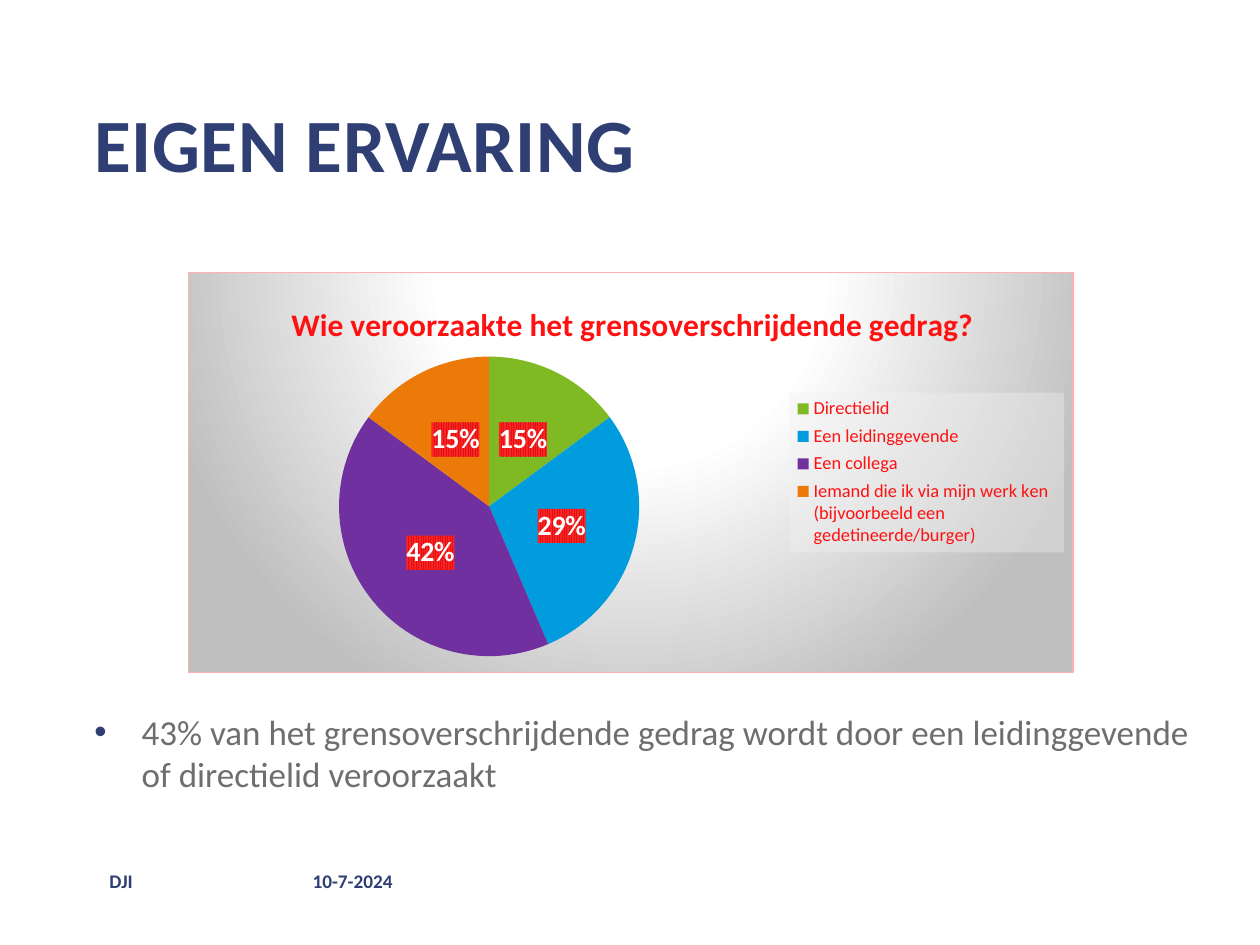
from pptx import Presentation
from pptx.chart.data import CategoryChartData
from pptx.dml.color import RGBColor
from pptx.enum.chart import XL_CHART_TYPE as ChartType
from pptx.enum.chart import XL_LABEL_POSITION as LabelPosition
from pptx.enum.chart import XL_LEGEND_POSITION as LegendPosition
from pptx.enum.text import MSO_ANCHOR as Anchor
from pptx.enum.text import MSO_AUTO_SIZE as AutoSize
from pptx.enum.text import PP_ALIGN as Align
from pptx.oxml import parse_xml
from pptx.oxml.ns import nsdecls
from pptx.util import Pt

NAVY = RGBColor(0x2F, 0x3F, 0x73)
GREY = RGBColor(0x6E, 0x6E, 0x6E)
RED = RGBColor(0xFF, 0x11, 0x11)
DARK_RED = RGBColor(0xC0, 0x00, 0x00)
WHITE = RGBColor(0xFF, 0xFF, 0xFF)
GREEN = RGBColor(0x7F, 0xBA, 0x25)
BLUE = RGBColor(0x00, 0x9C, 0xDE)
PURPLE = RGBColor(0x70, 0x30, 0xA0)
ORANGE = RGBColor(0xEC, 0x7A, 0x08)

CHART_BACKGROUND = """<a:gradFill><a:gsLst>
<a:gs pos="0"><a:srgbClr val="FFFFFF"/></a:gs>
<a:gs pos="39000"><a:srgbClr val="FFFFFF"/></a:gs>
<a:gs pos="100000"><a:srgbClr val="BFBFBF"/></a:gs></a:gsLst>
<a:path path="circle"><a:fillToRect l="50000" t="-80000" r="50000" b="180000"/></a:path>
</a:gradFill>
<a:ln w="9525"><a:solidFill><a:srgbClr val="FFB0B0"/></a:solidFill></a:ln>"""
LEGEND_BACKGROUND = """<a:solidFill><a:srgbClr val="F2F2F2">
<a:alpha val="39000"/></a:srgbClr></a:solidFill>"""
LABEL_BACKGROUND = """<a:pattFill prst="narVert"><a:fgClr><a:srgbClr val="D81414"/></a:fgClr>
<a:bgClr><a:srgbClr val="FF2222"/></a:bgClr></a:pattFill>"""

SLICES = [
    ("Directielid", 15, GREEN),
    ("Een leidinggevende", 29, BLUE),
    ("Een collega", 42, PURPLE),
    ("Iemand die ik via mijn werk ken (bijvoorbeeld een gedetineerde/burger)", 15, ORANGE),
]


def add_background(element, fill):
    """Put shape properties right before the text properties of a chart element."""
    text_properties = element.xpath("./c:txPr")[0]
    text_properties.addprevious(parse_xml(f"<c:spPr {nsdecls('c', 'a')}>{fill}</c:spPr>"))


def set_layout(element, index, target="", **fractions):
    """Place a chart element by fractions of the chart area."""
    for layout in element.xpath("./c:layout"):
        element.remove(layout)
    modes = '<c:xMode val="edge"/><c:yMode val="edge"/>'
    values = "".join(f'<c:{key} val="{value}"/>' for key, value in fractions.items())
    element.insert(index, parse_xml(
        f"<c:layout {nsdecls('c')}><c:manualLayout>{target}{modes}{values}"
        "</c:manualLayout></c:layout>"))


class SlideBuilder:
    font_name = "Calibri"

    def __init__(self, slide):
        self.slide = slide

    def style(self, font, size, color, bold=False):
        values = {"name": self.font_name, "size": Pt(size), "bold": bold}
        for name, value in values.items():
            setattr(font, name, value)
        font.color.rgb = color

    def fill_text(self, shape, text, size, color, bold, anchor, wrap):
        frame = shape.text_frame
        values = {"margin_left": 0, "margin_top": 0, "margin_right": 0, "margin_bottom": 0,
                  "auto_size": AutoSize.NONE, "word_wrap": wrap, "vertical_anchor": anchor}
        for name, value in values.items():
            setattr(frame, name, value)
        paragraph = frame.paragraphs[0]
        paragraph.alignment = Align.LEFT
        run = paragraph.add_run()
        run.text = text
        self.style(run.font, size, color, bold)
        return paragraph

    def title(self, text, left, top, width, height):
        shape = self.slide.shapes.title
        box = {"left": left, "top": top, "width": width, "height": height}
        for name, value in box.items():
            setattr(shape, name, Pt(value))
        paragraph = self.fill_text(shape, text, 43, NAVY, True, Anchor.TOP, False)
        paragraph.runs[0].font._element.set("spc", "40")

    def text(self, text, box, size, color, bold=False, anchor=Anchor.TOP, wrap=True):
        shape = self.slide.shapes.add_textbox(*map(Pt, box))
        return self.fill_text(shape, text, size, color, bold, anchor, wrap)

    def bullet(self, text, box):
        paragraph = self.text(text, box, 20, GREY)
        properties = paragraph._p.get_or_add_pPr()
        properties.set("marL", str(Pt(27)))
        properties.set("indent", str(-Pt(27)))
        for child in (f'<a:buClr {nsdecls("a")}><a:srgbClr val="{NAVY}"/></a:buClr>',
                      f'<a:buFont {nsdecls("a")} typeface="Arial"/>',
                      f'<a:buChar {nsdecls("a")} char="•"/>'):
            properties.append(parse_xml(child))

    def pie(self, title, slices, box):
        data = CategoryChartData()
        data.categories = [name for name, _, _ in slices]
        data.add_series("Series 1", [value for _, value, _ in slices])
        chart = self.slide.shapes.add_chart(ChartType.PIE, *map(Pt, box), data).chart
        self.style(chart.font, 10, DARK_RED)
        add_background(chart.element, CHART_BACKGROUND)

        chart.has_title = True
        run = chart.chart_title.text_frame.paragraphs[0].add_run()
        run.text = title
        self.style(run.font, 18, RED, True)
        set_layout(chart.element.xpath(".//c:chart/c:title")[0], 1, x=0.11, y=0.06)

        chart.has_legend = True
        legend = chart.legend
        legend.position = LegendPosition.RIGHT
        legend.include_in_layout = False
        self.style(legend.font, 10.5, RED)
        legend_element = chart.element.xpath(".//c:legend")[0]
        add_background(legend_element, LEGEND_BACKGROUND)
        set_layout(legend_element, 1, x=0.68, y=0.3, w=0.31, h=0.4)

        plot = chart.plots[0]
        plot.vary_by_categories = True
        for index, (_, _, color) in enumerate(slices):
            fill = plot.series[0].points[index].format.fill
            fill.solid()
            fill.fore_color.rgb = color
        labels = plot.series[0].data_labels
        values = {"show_percentage": True, "show_value": False, "number_format": "0%",
                  "number_format_is_linked": False, "position": LabelPosition.CENTER}
        for name, value in values.items():
            setattr(labels, name, value)
        self.style(labels.font, 16, WHITE, True)
        add_background(chart.element.xpath(".//c:ser/c:dLbls")[0], LABEL_BACKGROUND)
        set_layout(chart.element.xpath(".//c:plotArea")[0], 0,
                   '<c:layoutTarget val="inner"/>', x=0.17, y=0.21, w=0.34, h=0.75)


def main():
    presentation = Presentation()
    presentation.slide_width = Pt(720)
    presentation.slide_height = Pt(540)
    builder = SlideBuilder(presentation.slides.add_slide(presentation.slide_layouts[5]))

    builder.title("EIGEN ERVARING", 54, 55.4, 453.6, 51.8)
    builder.pie("Wie veroorzaakte het grensoverschrijdende gedrag?", SLICES,
                (107.3, 155.5, 506.2, 229))
    builder.bullet("43% van het grensoverschrijdende gedrag wordt door een leidinggevende "
                   "of directielid veroorzaakt", (54, 406, 640.8, 78.5))
    for text, left, width in (("DJI", 62.6, 108), ("10-7-2024", 178.6, 93.6)):
        builder.text(text, (left, 496, width, 14.4), 11, NAVY, True, Anchor.MIDDLE, False)

    presentation.save("out.pptx")


if __name__ == "__main__":
    main()
